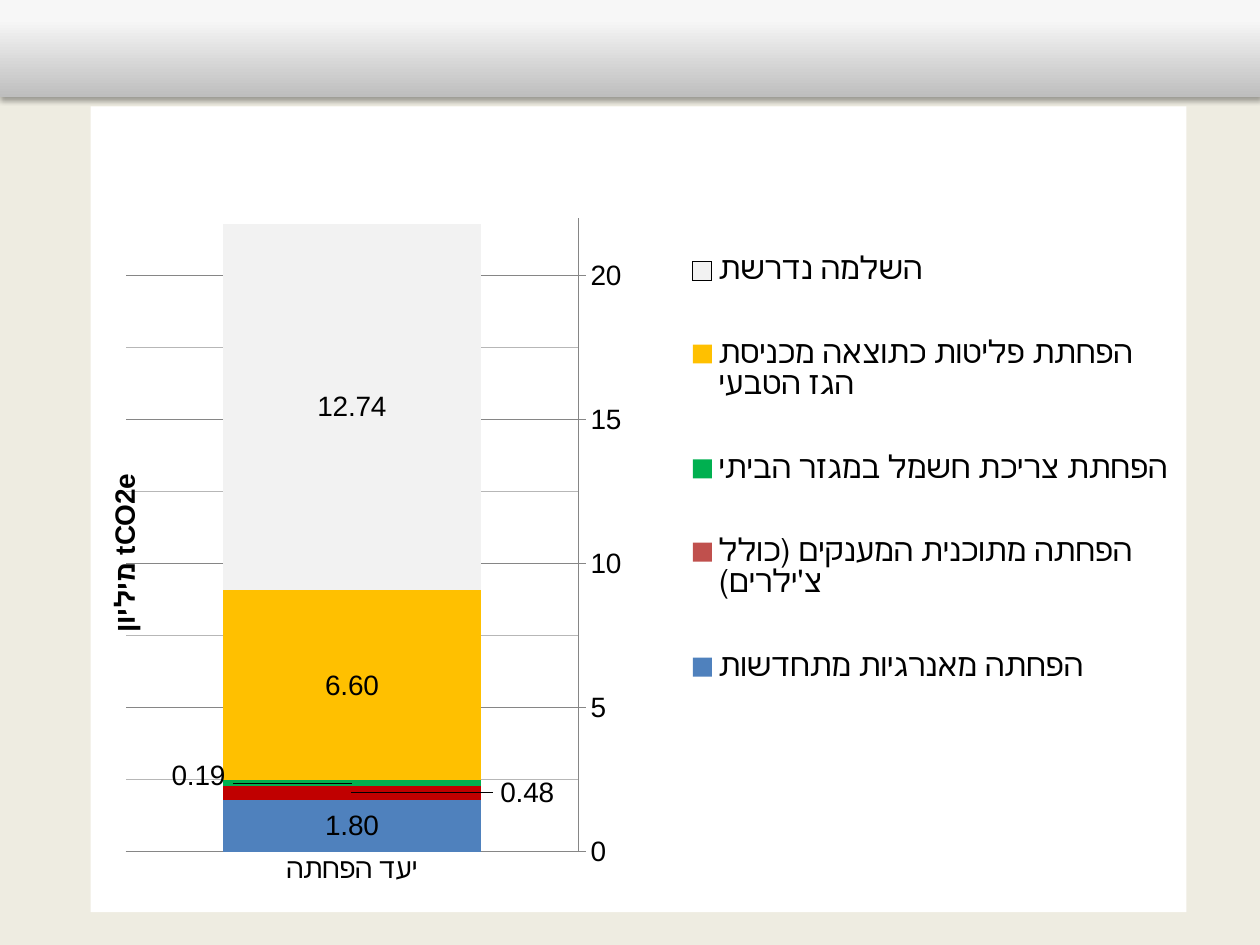
from lxml import etree
from pptx import Presentation
from pptx import util as u
from pptx.chart.data import CategoryChartData
from pptx.dml.color import RGBColor
from pptx.enum import chart as ch, shapes
from pptx.oxml import parse_xml
from pptx.oxml.ns import nsdecls, qn

PX = 9525  # EMU per px, 96 px to the inch
FONT = "Arial"
LABEL_FORMAT = '_(* #,##0.00_);_(* \\(#,##0.00\\);_(* "-"??_);_(@_)'

# Name, value, series colour, bar colour, label offset from the bar's centre
SERIES = [
    ("הפחתה מאנרגיות מתחדשות", 1.8, "4F81BD", None, None),
    ("הפחתה מתוכנית המענקים (כולל צ'ילרים)", 0.48, "C0504D", "C00000", (0.16, 0)),
    ("הפחתת צריכת חשמל במגזר הביתי", 0.19, "00B050", None, (-0.14, -0.01)),
    ("הפחתת פליטות כתוצאה מכניסת הגז הטבעי", 6.6, "FFC000", None, None),
    ("השלמה נדרשת", 12.74, "F2F2F2", "F2F2F2", None),
]


def box(*lengths):
    return [u.Emu(n * PX) for n in lengths]


def rgb(code):
    return RGBColor.from_string(code)


def paint(fill, code):
    fill.solid()
    fill.fore_color.rgb = rgb(code)


def style_font(font, size, bold=False):
    font.name, font.size, font.bold = FONT, u.Pt(size), bold
    font.color.rgb = rgb("000000")


def style_line(line, code, width=0.75):
    line.color.rgb = rgb(code)
    line.width = u.Pt(width)


def set_layout(parent, index, inner=False, edge=True, **sizes):
    """Give a chart part a manual layout as fractions of the chart."""
    for old in parent.findall(qn("c:layout")):
        parent.remove(old)
    layout = parse_xml(f"<c:layout {nsdecls('c')}><c:manualLayout/></c:layout>")
    items = [("layoutTarget", "inner")] if inner else []
    if edge:
        items += [("xMode", "edge"), ("yMode", "edge")]
    for tag, value in items + list(sizes.items()):
        etree.SubElement(layout[0], qn(f"c:{tag}")).set("val", str(value))
    parent.insert(index, layout)


def add_band(s):
    """Shaded band across the top of the slide."""
    band = s.shapes.add_shape(shapes.MSO_SHAPE.RECTANGLE, *box(0, 0, 960, 74))
    band.line.fill.background()
    band.shadow.inherit = False
    band.fill.gradient()
    band.fill.gradient_angle = 90
    stops = band._element.spPr.find(qn("a:gradFill")).find(qn("a:gsLst"))
    for stop in list(stops):
        stops.remove(stop)
    for pos, code in [(0, "BEBEBE"), (80, "F7F7F7"), (100, "F8F8F8")]:
        stops.append(parse_xml(
            f'<a:gs {nsdecls("a")} pos="{pos * 1000}"><a:srgbClr val="{code}"/></a:gs>'))
    band._element.spPr.find(qn("a:effectLst")).append(parse_xml(
        f'<a:outerShdw {nsdecls("a")} blurRad="{u.Pt(3.1)}" dist="{u.Pt(1.8)}" '
        'dir="5400000" rotWithShape="0"><a:srgbClr val="000000">'
        '<a:alpha val="35000"/></a:srgbClr></a:outerShdw>'))


def style_series(series, color, bar_color, offset):
    paint(series.format.fill, color)
    series.invert_if_negative = False
    if bar_color:
        point = series.points[0]
        paint(point.format.fill, bar_color)
        point.format.line.fill.background()
    labels = series.data_labels
    labels.show_value = True
    labels.number_format = LABEL_FORMAT
    labels.number_format_is_linked = False
    labels.position = ch.XL_LABEL_POSITION.CENTER
    style_font(labels.font, 16)
    if offset:
        label = series.points[0].data_label
        style_font(label.font, 16)
        label.position = ch.XL_LABEL_POSITION.CENTER
        dlbl = labels._element.find(qn("c:dLbl"))
        set_layout(dlbl, 1, edge=False, x=offset[0], y=offset[1])


def style_axes(chart):
    cat, val = chart.category_axis, chart.value_axis
    cat.reverse_order = True
    cat.major_tick_mark = ch.XL_TICK_MARK.NONE
    val.minimum_scale, val.maximum_scale = 0, 22
    val.major_unit, val.minor_unit = 5, 2.5
    val.major_tick_mark = ch.XL_TICK_MARK.OUTSIDE
    val.has_major_gridlines = val.has_minor_gridlines = True
    val.tick_labels.number_format = "#,##0"
    val.tick_labels.number_format_is_linked = False
    style_line(val.major_gridlines.format.line, "868686")
    val._element.find(qn("c:minorGridlines")).append(parse_xml(
        f'<c:spPr {nsdecls("c", "a")}><a:ln w="{u.Pt(0.75)}"><a:solidFill>'
        '<a:srgbClr val="B7B7B7"/></a:solidFill></a:ln></c:spPr>'))
    for axis in (cat, val):
        style_font(axis.tick_labels.font, 16)
        style_line(axis.format.line, "868686")

    # Value axis title, placed at the left
    tf = val.axis_title.text_frame
    r = tf.paragraphs[0].add_run()
    r.text = "מיליון tCO2e"
    style_font(r.font, 16, bold=True)
    body = tf._txBody.find(qn("a:bodyPr"))
    body.set("rot", "-5400000")
    body.set("vert", "horz")
    set_layout(val.axis_title._element, 1, x=0.01, y=0.45)


def add_reduction_chart(s):
    data = CategoryChartData()
    data.categories = ["יעד הפחתה"]
    for name, value, *_ in SERIES:
        data.add_series(name, [value])
    chart = s.shapes.add_chart(ch.XL_CHART_TYPE.COLUMN_STACKED,
                               *box(69, 81, 835, 614), data).chart
    chart.has_title = False
    style_font(chart.font, 10)
    chart._chartSpace.find(qn("c:txPr")).addprevious(parse_xml(
        f'<c:spPr {nsdecls("c", "a")}><a:solidFill><a:srgbClr val="FFFFFF"/>'
        '</a:solidFill><a:ln><a:noFill/></a:ln></c:spPr>'))

    # Bars
    plot = chart.plots[0]
    plot.gap_width, plot.overlap, plot.vary_by_categories = 75, 100, False
    for series, (_, _, *style) in zip(plot.series, SERIES):
        style_series(series, *style)
    style_line(plot.series[-1].format.line, "000000", 2)
    plot_area = chart._chartSpace.chart.plotArea
    set_layout(plot_area, 0, inner=True, x=0.032, y=0.139, w=0.413, h=0.786)
    style_axes(chart)

    # Legend
    chart.has_legend = True
    legend = chart.legend
    legend.position = ch.XL_LEGEND_POSITION.RIGHT
    legend.include_in_layout = False
    style_font(legend.font, 18)
    set_layout(legend._element, 1, x=0.55, y=0.12, w=0.44, h=0.66)


def main():
    prs = Presentation()
    prs.slide_width, prs.slide_height = box(960, 720)
    s = prs.slides.add_slide(prs.slide_layouts[6])
    paint(s.background.fill, "EEECE1")
    add_band(s)
    add_reduction_chart(s)
    prs.save("out.pptx")


if __name__ == "__main__":
    main()
